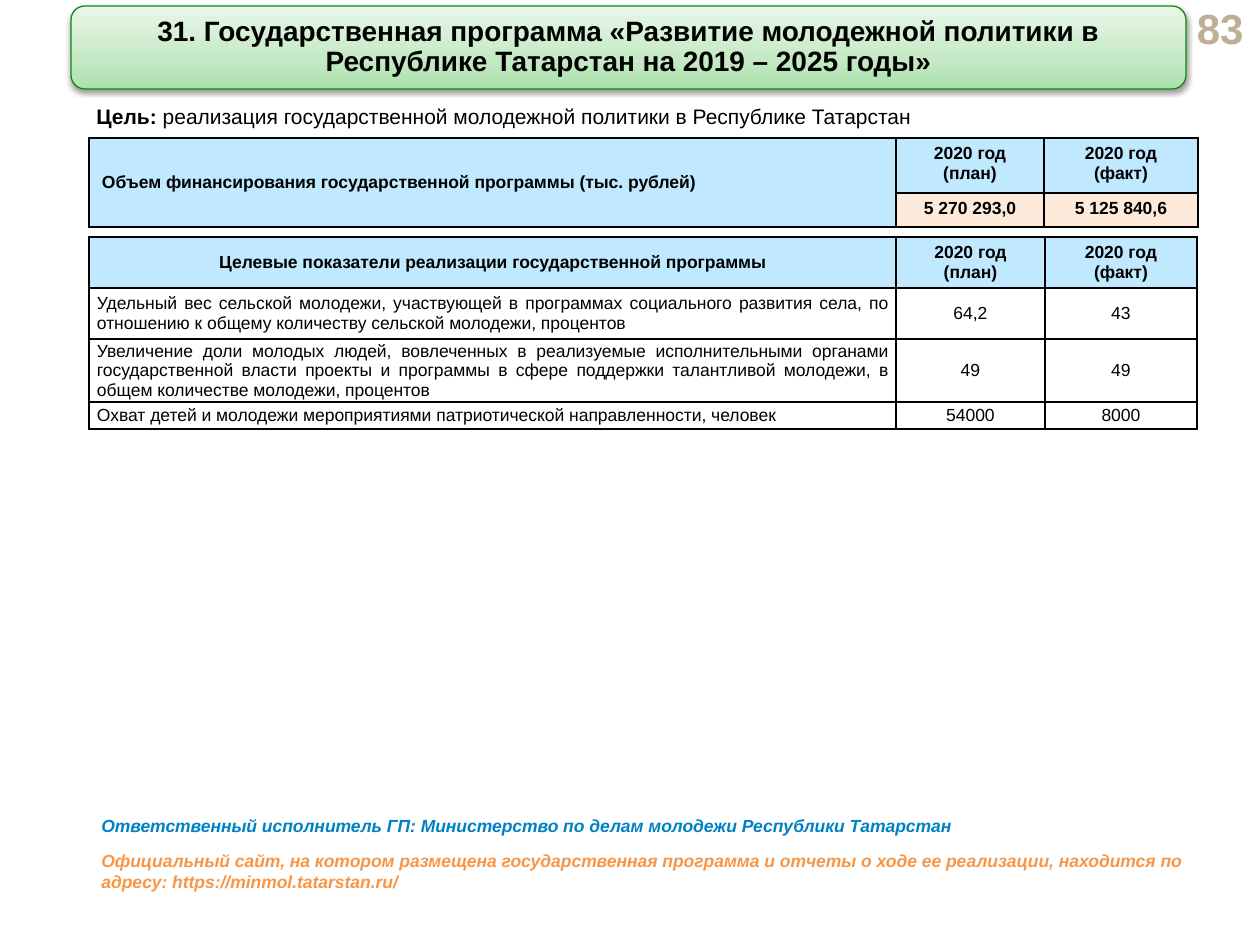
from lxml.etree import SubElement
from pptx import Presentation
from pptx.dml.color import RGBColor
from pptx.enum.shapes import MSO_SHAPE
from pptx.enum.text import MSO_ANCHOR as Anchor, PP_ALIGN as Align
from pptx.oxml.ns import qn
from pptx.util import Pt

PX = 914400 // 126
BLACK = RGBColor(0, 0, 0)
WHITE = RGBColor(255, 255, 255)
TAN = RGBColor(0xBF, 0xAE, 0x96)
BLUE = RGBColor(0x00, 0x81, 0xC5)
ORANGE = RGBColor(0xF7, 0x96, 0x46)
GREEN = RGBColor(0x10, 0x88, 0x12)
SKY = RGBColor(0xC0, 0xE9, 0xFF)
PEACH = RGBColor(0xFD, 0xEA, 0xDA)
BANNER_STOPS = [
    (0, RGBColor(0xAB, 0xE1, 0xAB)),
    (35, RGBColor(0xC5, 0xE9, 0xC5)),
    (100, RGBColor(0xE8, 0xF7, 0xE8)),
]

PAGE = "83"
TITLE = "31. Государственная программа «Развитие молодежной политики в Республике Татарстан на 2019 – 2025 годы»"
GOAL = [("Цель: ", True), ("реализация государственной молодежной политики в Республике Татарстан", False)]
FUNDING = [
    ("Объем финансирования государственной программы (тыс. рублей)", "2020 год\n(план)", "2020 год (факт)"),
    ("", "5 270 293,0", "5 125 840,6"),
]
INDICATORS = [
    ("Целевые показатели реализации государственной программы", "2020 год\v(план)", "2020 год\v(факт)"),
    ("Удельный вес сельской молодежи, участвующей в программах социального развития села, "
     "по отношению к общему количеству сельской молодежи, процентов", "64,2", "43"),
    ("Увеличение доли молодых людей, вовлеченных в реализуемые исполнительными органами "
     "государственной власти проекты и программы в сфере поддержки талантливой молодежи, "
     "в общем количестве молодежи, процентов", "49", "49"),
    ("Охват детей и молодежи мероприятиями патриотической направленности, человек", "54000", "8000"),
]
FOOTERS = [
    ("Ответственный исполнитель ГП: Министерство по делам молодежи Республики Татарстан",
     BLUE, (89, 809, 1120, 34)),
    ("Официальный сайт, на котором размещена государственная программа и отчеты о ходе ее реализации, "
     "находится по адресу: https://minmol.tatarstan.ru/", ORANGE, (89, 844, 1113, 55)),
]


def px(values):
    return [value * PX for value in values]


def style(frame, size, color=BLACK, bold=None, italic=None, align=Align.LEFT):
    frame.word_wrap = True
    for paragraph in frame.paragraphs:
        paragraph.alignment = align
        font = paragraph.font
        font.name, font.size, font.bold, font.italic = "Arial", Pt(size), bold, italic
        font.color.rgb = color


def add_text(slide, box, text, size, **look):
    frame = slide.shapes.add_textbox(*px(box)).text_frame
    frame.text = text
    style(frame, size, **look)
    return frame


def add_color(parent, color, alpha=None):
    node = SubElement(parent, qn("a:srgbClr"), val=str(color))
    if alpha:
        SubElement(node, qn("a:alpha"), val=str(alpha * 1000))


def add_banner(slide):
    banner = slide.shapes.add_shape(MSO_SHAPE.ROUNDED_RECTANGLE, *px((71, 6, 1115, 83)))
    banner.fill.gradient()
    banner.fill.gradient_angle = 90
    properties = banner._element.spPr
    stops = properties.find(".//" + qn("a:gsLst"))
    for stop in list(stops):
        stops.remove(stop)
    for position, color in BANNER_STOPS:
        add_color(SubElement(stops, qn("a:gs"), pos=str(position * 1000)), color)
    banner.line.color.rgb = GREEN
    banner.line.width = Pt(0.75)
    banner.shadow.inherit = False
    shadow = SubElement(properties.find(qn("a:effectLst")), qn("a:outerShdw"), blurRad=str(Pt(3.1)),
                        dist=str(Pt(1.6)), dir="5400000", rotWithShape="0")
    add_color(shadow, BLACK, 38)
    banner.text_frame.text = TITLE
    style(banner.text_frame, 16, bold=True, align=Align.CENTER)
    banner.text_frame.paragraphs[0].line_spacing = 0.9


def add_borders(cell):
    properties = cell._tc.get_or_add_tcPr()
    for side in ("lnL", "lnR", "lnT", "lnB"):
        border = SubElement(properties, qn(f"a:{side}"), w=str(Pt(1)))
        add_color(SubElement(border, qn("a:solidFill")), BLACK)


def add_grid(slide, top, rows, widths, heights, look):
    shape = slide.shapes.add_table(len(rows), len(widths), *px((89, top, sum(widths), sum(heights))))
    table = shape.table
    for column, width in zip(table.columns, widths):
        column.width = width * PX
    for r, (row, height) in enumerate(zip(rows, heights)):
        table.rows[r].height = height * PX
        for c, text in enumerate(row):
            cell = table.cell(r, c)
            fill, bold, align, anchor, side, edge = look(r, c)
            add_borders(cell)
            cell.fill.solid()
            cell.fill.fore_color.rgb = fill
            cell.vertical_anchor = anchor
            cell.margin_left = cell.margin_right = side * PX
            cell.margin_top = cell.margin_bottom = edge * PX
            cell.text = text
            style(cell.text_frame, 10, bold=bold, align=align)
    return table


def funding_look(r, c):
    fill = PEACH if r and c else SKY
    return (fill, True, Align.CENTER, Anchor.TOP, 13, 6) if c else (fill, True, Align.LEFT, Anchor.MIDDLE, 13, 6)


def indicator_look(r, c):
    if r == 0:
        return SKY, True, Align.CENTER, Anchor.MIDDLE, 0, 0
    return WHITE, False, Align.CENTER if c else Align.JUSTIFY, Anchor.MIDDLE, 8, 0


def main():
    deck = Presentation()
    deck.slide_width, deck.slide_height = px((1260, 945))
    slide = deck.slides.add_slide(deck.slide_layouts[6])
    page = add_text(slide, (1176, 6, 80, 43), PAGE, 24, color=TAN, bold=True, align=Align.RIGHT)
    page.vertical_anchor = Anchor.MIDDLE

    goal = add_text(slide, (84, 100, 1100, 34), "", 12)
    goal.paragraphs[0].line_spacing = 0.9
    for text, bold in GOAL:
        run = goal.paragraphs[0].add_run()
        run.text, run.font.bold = text, bold

    add_banner(slide)
    funding = add_grid(slide, 138, FUNDING, (807, 148, 154), (55, 34), funding_look)
    funding.cell(0, 0).merge(funding.cell(1, 0))
    add_grid(slide, 237, INDICATORS, (807, 149, 152), (51, 51, 63, 27), indicator_look)
    for text, color, box in FOOTERS:
        add_text(slide, box, text, 10, color=color, bold=True, italic=True)
    deck.save("out.pptx")


if __name__ == "__main__":
    main()
